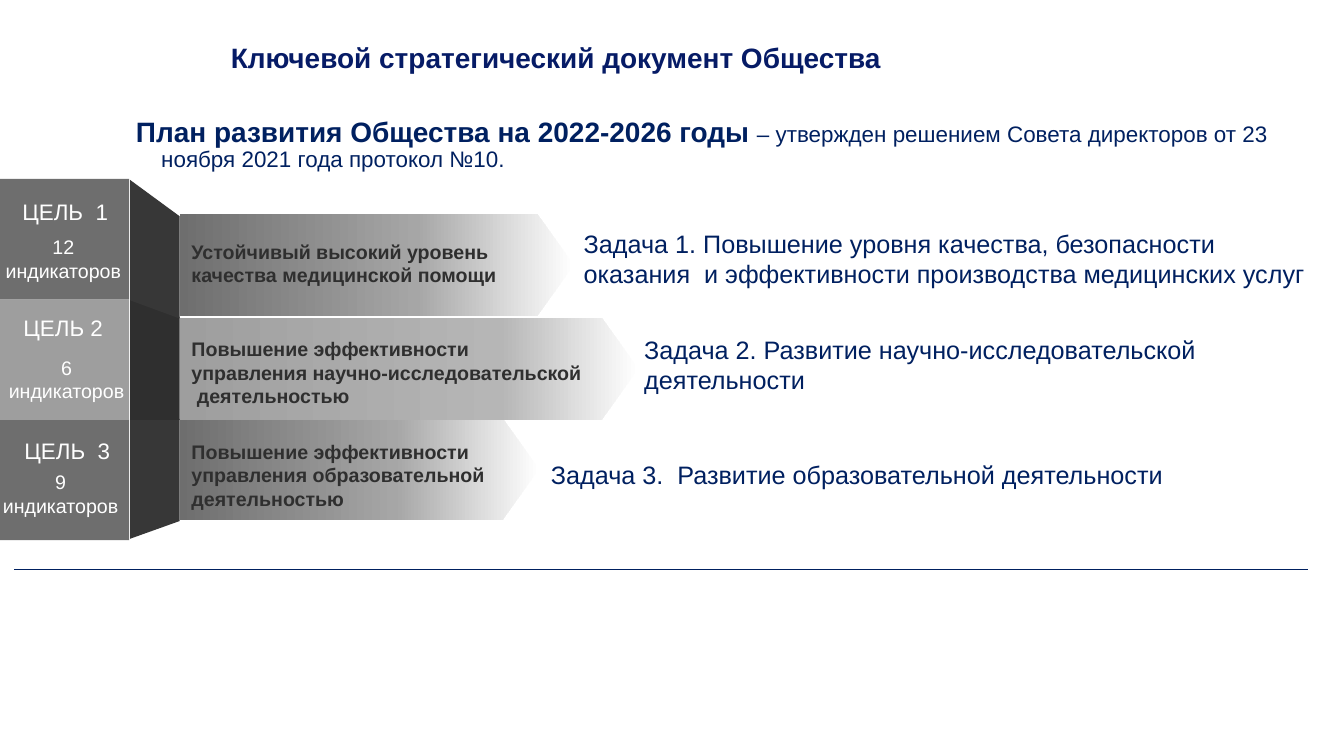
from copy import deepcopy
from pptx import Presentation, util as u
from pptx.dml import color
from pptx.enum import shapes, text
from pptx.oxml import ns
from lxml import etree

NAVY, DARK, WHITE = "002060", "2F2F2F", "FFFFFF"
LEFT, CENTER = text.PP_ALIGN.LEFT, text.PP_ALIGN.CENTER
TOP, MIDDLE = text.MSO_ANCHOR.TOP, text.MSO_ANCHOR.MIDDLE

prs = Presentation()
prs.slide_width, prs.slide_height = u.Inches(26.66), u.Inches(15)
# All lengths are percent of the slide's width (X) and height (Y)
X, Y = prs.slide_width / 100, prs.slide_height / 100
slide = prs.slides.add_slide(prs.slide_layouts[5])


def paint(target, value):
    """Set a solid fill, or the colour of a font or line."""
    if hasattr(target, "solid"):
        target.solid()
        target = target.fore_color
    target.rgb = color.RGBColor.from_string(value)


def write(sp, box, runs, align=LEFT, anchor=TOP, before=0, hanging=False):
    """Place a text shape and fill it with (text, size, colour, bold) runs."""
    x, y, w, h = box
    sp.left, sp.top, sp.width, sp.height = int(x * X), int(y * Y), int(w * X), int(h * Y)
    tf = sp.text_frame
    tf.word_wrap, tf.auto_size, tf.vertical_anchor = True, text.MSO_AUTO_SIZE.NONE, anchor
    p = tf.paragraphs[0]
    p.alignment, p.space_before = align, u.Pt(before)
    if hanging:
        p.line_spacing = 0.9
        pPr = p._p.get_or_add_pPr()
        pPr.set("marL", str(u.Inches(0.5)))
        pPr.set("indent", str(u.Inches(-0.5)))
    for words, size, hue, bold in runs:
        r = p.add_run()
        r.text = words
        r.font.name, r.font.size, r.font.bold = "Arial", u.Pt(size), bold
        paint(r.font.color, hue)


# Goal band: one row per goal
GOAL_X, GOAL_Y, GOAL_W, GOAL_H = -0.07, 23.67, 9.68, 15.93
FOLD_X, ARROW_X, ARROW_H, POINT = 9.68, 13.36, 13.55, 2.74
GREY = ("6E6E6E", "373737", [(0, WHITE), (0.4, "A6A6A6"), (1, "6E6E6E")])
LIGHT = ("9E9E9E", "2F2F2F", [(0, WHITE), (0.3, "B6B6B6"), (1, "9E9E9E")])
# colours, fold corners (left top, right top, right bottom, left bottom), arrow top, arrow tip
bands = [
    (GREY, (23.8, 28.6, 42.13, 39.73), 28.27, 42.69),
    (LIGHT, (39.6, 41.93, 55.53, 55.53), 42, 47.49),
    (GREY, (55.4, 55.4, 68.93, 71.27), 55.27, 40.1),
]
for row, ((face, shade, stops), fold, top, tip) in reversed(list(enumerate(bands))):
    s = slide.shapes.add_shape(shapes.MSO_SHAPE.RECTANGLE, int(GOAL_X * X),
                               int((GOAL_Y + row * GOAL_H) * Y), int(GOAL_W * X), int(GOAL_H * Y))
    paint(s.fill, face)
    s.line.fill.background()
    s.shadow.inherit = False

    fold_points = list(zip((FOLD_X, ARROW_X, ARROW_X, FOLD_X), fold))
    bottom = top + ARROW_H
    arrow_points = [(ARROW_X, top), (tip - POINT, top), (tip, top + ARROW_H / 2),
                    (tip - POINT, bottom), (ARROW_X, bottom)]
    for points, gradient in ((fold_points, None), (arrow_points, stops)):
        corners = [(int(x * X), int(y * Y)) for x, y in points]
        builder = slide.shapes.build_freeform(*corners[0])
        builder.add_line_segments(corners[1:], close=True)
        s = builder.convert_to_shape()
        s.line.fill.background()
        s.shadow.inherit = False
        if gradient is None:
            paint(s.fill, shade)
            continue
        s.fill.gradient()
        s.fill.gradient_angle = 180
        stop_list = s._element.spPr.find(".//" + ns.qn("a:gsLst"))
        stop_list.insert(1, deepcopy(stop_list[0]))
        for stop, (position, hue) in zip(s.fill.gradient_stops, gradient):
            stop.position = position
            paint(stop.color, hue)

# Texts on the arrows
for box, words in [
    ((13.88, 30.6, 24.83, 8.4), "Устойчивый высокий уровень качества медицинской помощи"),
    ((13.88, 42.53, 29.93, 13.47),
     "Повышение эффективности управления научно-исследовательской  деятельностью"),
    ((13.88, 58.6, 24.57, 8.4), "Повышение эффективности управления образовательной деятельностью"),
]:
    write(slide.shapes.add_textbox(0, 0, 0, 0), box, [(words, 28, DARK, True)],
          anchor=MIDDLE, before=20)

# Goal names, indicator counts and tasks
for box, words, size, hue, align in [
    ((0.45, 25.93, 8.81, 4.27), "ЦЕЛЬ  1", 32, WHITE, CENTER),
    ((0.08, 41.27, 9.71, 4.27), "ЦЕЛЬ 2 ", 32, WHITE, CENTER),
    ((0.15, 57.47, 9.71, 4.27), "ЦЕЛЬ  3", 32, WHITE, CENTER),
    ((-0.26, 30.8, 9.94, 6.93), "12 индикаторов", 28, WHITE, CENTER),
    ((-0.23, 46.73, 10.35, 6.93), "6 индикаторов", 28, WHITE, CENTER),
    ((-0.56, 61.87, 10.13, 6.93), "9 индикаторов", 28, WHITE, CENTER),
    ((43.06, 29.87, 55.36, 8.73), "Задача 1. Повышение уровня качества, безопасности оказания  "
     "и эффективности производства медицинских услуг", 36, NAVY, LEFT),
    ((47.56, 43.87, 49.7, 8.73), "Задача 2. Развитие научно-исследовательской деятельности",
     36, NAVY, LEFT),
    ((40.62, 60.47, 55.36, 4.73), "Задача 3.  Развитие образовательной деятельности",
     36, NAVY, LEFT),
]:
    write(slide.shapes.add_textbox(0, 0, 0, 0), box, [(words, size, hue, False)], align)

# Title and plan
write(slide.shapes.title, (16.8, 3.6, 66.43, 8.47),
      [("Ключевой стратегический документ Общества", 40, "061B66", True)],
      anchor=MIDDLE, before=20, hanging=True)
write(slide.shapes.add_textbox(0, 0, 0, 0), (9.75, 12.2, 87.62, 14),
      [("План развития Общества на 2022-2026 годы ", 40, NAVY, True),
       ("– утвержден решением Совета директоров от 23 ноября 2021 года протокол №10.",
        32, NAVY, False)],
      anchor=MIDDLE, before=20, hanging=True)

# Closing rule
rule = slide.shapes.add_connector(shapes.MSO_CONNECTOR.STRAIGHT, int(1.05 * X), int(75.33 * Y),
                                  int(97.3 * X), int(75.33 * Y))
paint(rule.line.color, NAVY)
rule.line.width = u.Pt(0.75)
etree.SubElement(rule._element.spPr, ns.qn("a:effectLst"))

prs.save("out.pptx")
